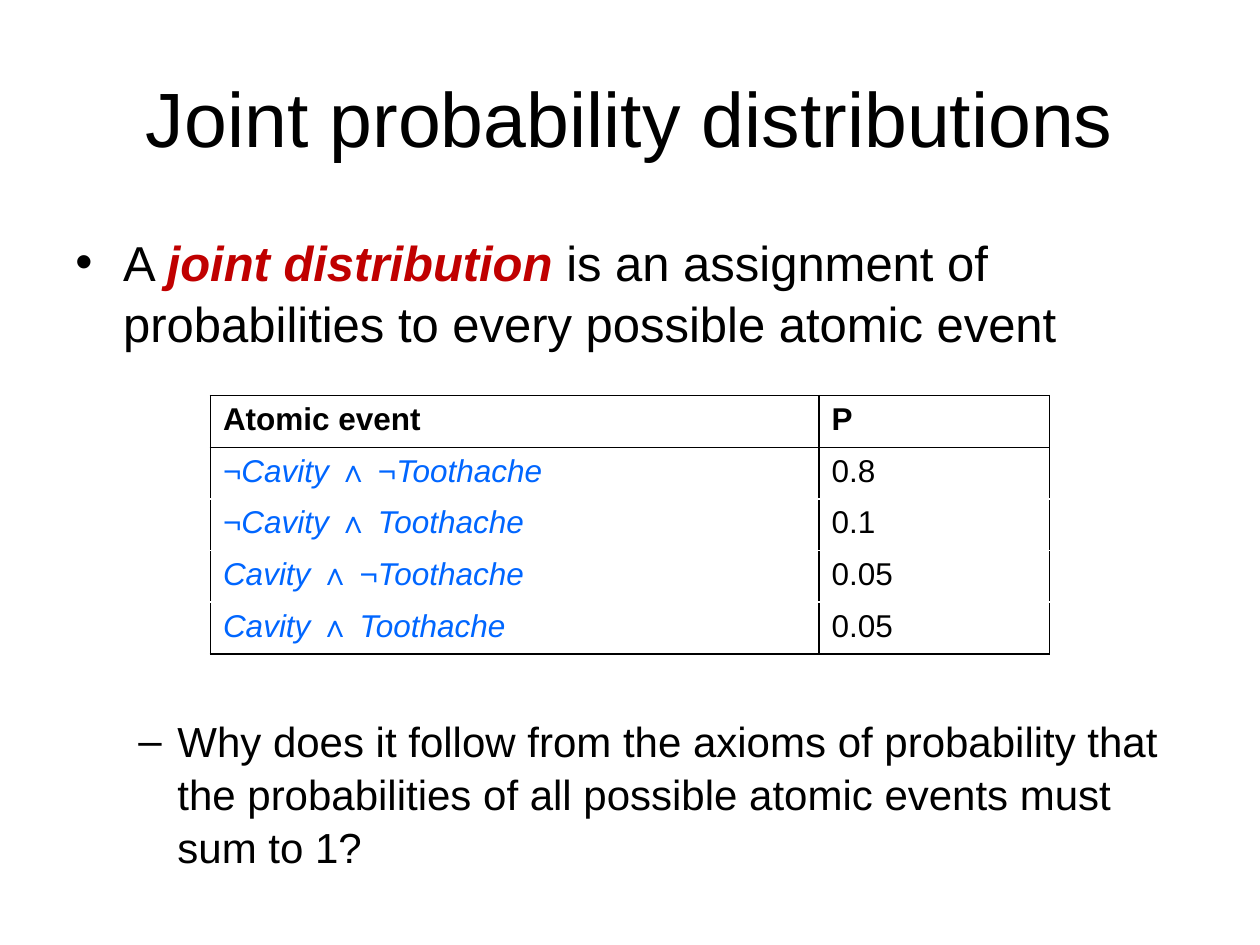
from lxml import etree
from pptx import Presentation
from pptx.dml.color import RGBColor
from pptx.enum import text
from pptx.oxml.ns import qn
from pptx.util import Inches, Pt

BLACK, WHITE, RED, BLUE = "000000", "FFFFFF", "C00000", "0066FF"

# Content: runs are (text, style), style letters b = bold, i = italic
TITLE = [("Joint probability distributions", "")]
# Bullets: mark, size, left indent, hanging indent, space before, runs
BULLETS = [
    ("•", 28, 0.38, 0.38, 0,
     [("A ", ""), ("joint distribution ", "bi"),
      ("is an assignment of probabilities to every possible atomic event", "")]),
    ("–", 24, 0.81, 0.31, 206,
     [("Why does it follow from the axioms of probability that the "
       "probabilities of all possible atomic events must sum to 1?", "")]),
]
HEADER = ("Atomic event", "P")
EVENTS = [
    ([("¬", ""), ("Cavity ", "i"), ("∧ ¬", ""), ("Toothache", "i")], "0.8"),
    ([("¬", ""), ("Cavity ", "i"), ("∧ ", ""), ("Toothache", "i")], "0.1"),
    ([("Cavity ", "i"), ("∧ ¬", ""), ("Toothache", "i")], "0.05"),
    ([("Cavity ", "i"), ("∧ ", ""), ("Toothache", "i")], "0.05"),
]
COL_WIDTHS = (4.83, 1.83)
ROW_HEIGHT = 0.41


def rgb(value):
    return RGBColor.from_string(value)


def add_runs(p, runs, size, color=BLACK):
    for words, style in runs:
        r = p.add_run()
        r.text = words
        r.font.name = "Arial"
        r.font.size = Pt(size)
        r.font.bold = "b" in style
        r.font.italic = "i" in style
        r.font.color.rgb = rgb(RED if style == "bi" else color)


def add_box(s, left, top, width, height, anchor):
    tf = s.shapes.add_textbox(*map(Inches, (left, top, width, height))).text_frame
    tf.word_wrap = True
    tf.vertical_anchor = anchor
    return tf


def set_bullet(p, mark, left, hanging):
    pPr = p._p.get_or_add_pPr()
    pPr.set("marL", str(Inches(left)))
    pPr.set("indent", str(-Inches(hanging)))
    etree.SubElement(pPr, qn("a:buFont")).set("typeface", "Arial")
    etree.SubElement(pPr, qn("a:buChar")).set("char", mark)


def set_borders(cell, top, bottom):
    """Black sides, given colours above and below; lines go before the fill."""
    tcPr = cell._tc.get_or_add_tcPr()
    sides = (("L", BLACK), ("R", BLACK), ("T", top), ("B", bottom))
    for i, (side, color) in enumerate(sides):
        ln = etree.Element(qn("a:ln" + side), w=str(Pt(1)))
        fill = etree.SubElement(ln, qn("a:solidFill"))
        etree.SubElement(fill, qn("a:srgbClr")).set("val", color)
        tcPr.insert(i, ln)


prs = Presentation()
prs.slide_width, prs.slide_height = Inches(10), Inches(7.5)
s = prs.slides.add_slide(prs.slide_layouts[6])

# Title
p = add_box(s, 0.5, 0.3, 9, 1.25, text.MSO_ANCHOR.MIDDLE).paragraphs[0]
p.alignment = text.PP_ALIGN.CENTER
add_runs(p, TITLE, 44)

# Bullets, with room for the table between them
tf = add_box(s, 0.5, 1.77, 9, 4.95, text.MSO_ANCHOR.TOP)
for i, (mark, size, left, hanging, before, runs) in enumerate(BULLETS):
    p = tf.add_paragraph() if i else tf.paragraphs[0]
    set_bullet(p, mark, left, hanging)
    p.line_spacing = 1.05
    p.space_before = Pt(before)
    add_runs(p, runs, size)

# Probability table
rows = [[([(name, "b")], BLACK) for name in HEADER]]
rows += [[(event, BLUE), ([(prob, "")], BLACK)] for event, prob in EVENTS]
table = s.shapes.add_table(
    len(rows), len(COL_WIDTHS), Inches(1.67), Inches(3.14),
    Inches(sum(COL_WIDTHS)), Inches(ROW_HEIGHT * len(rows))).table
for col, width in zip(table.columns, COL_WIDTHS):
    col.width = Inches(width)
last = len(rows) - 1
for i, row in enumerate(rows):
    table.rows[i].height = Inches(ROW_HEIGHT)
    for j, (runs, color) in enumerate(row):
        cell = table.cell(i, j)
        cell.fill.solid()
        cell.fill.fore_color.rgb = rgb(WHITE)
        set_borders(cell, BLACK if i < 2 else WHITE,
                    BLACK if i in (0, last) else WHITE)
        add_runs(cell.text_frame.paragraphs[0], runs, 18, color)

prs.save("out.pptx")
